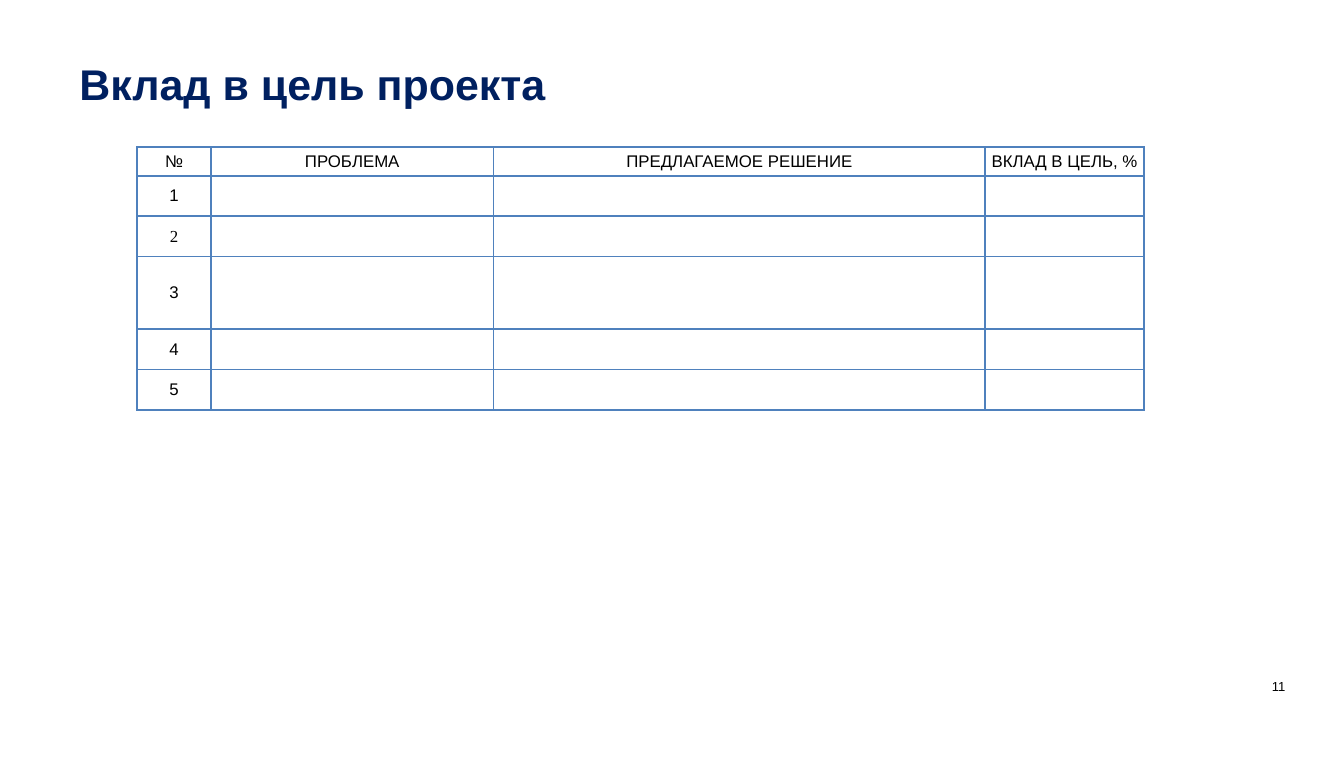
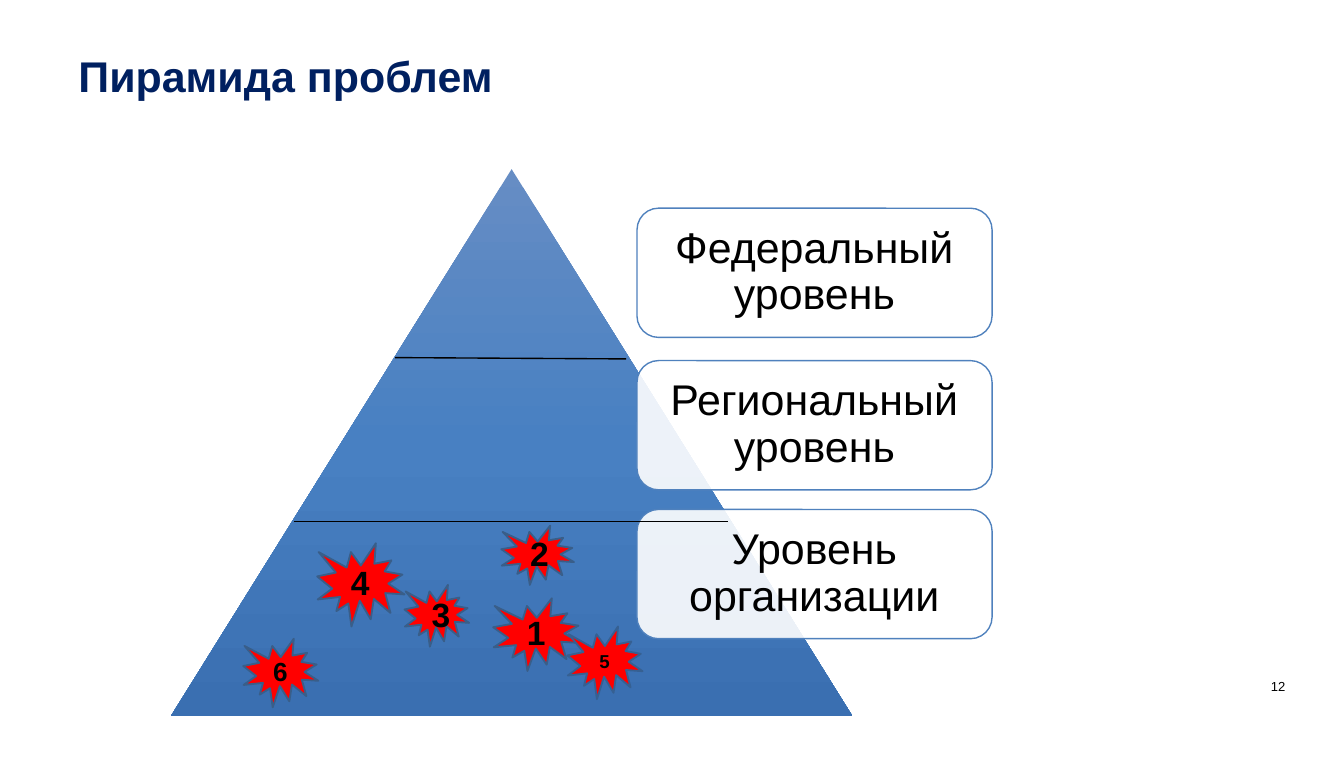
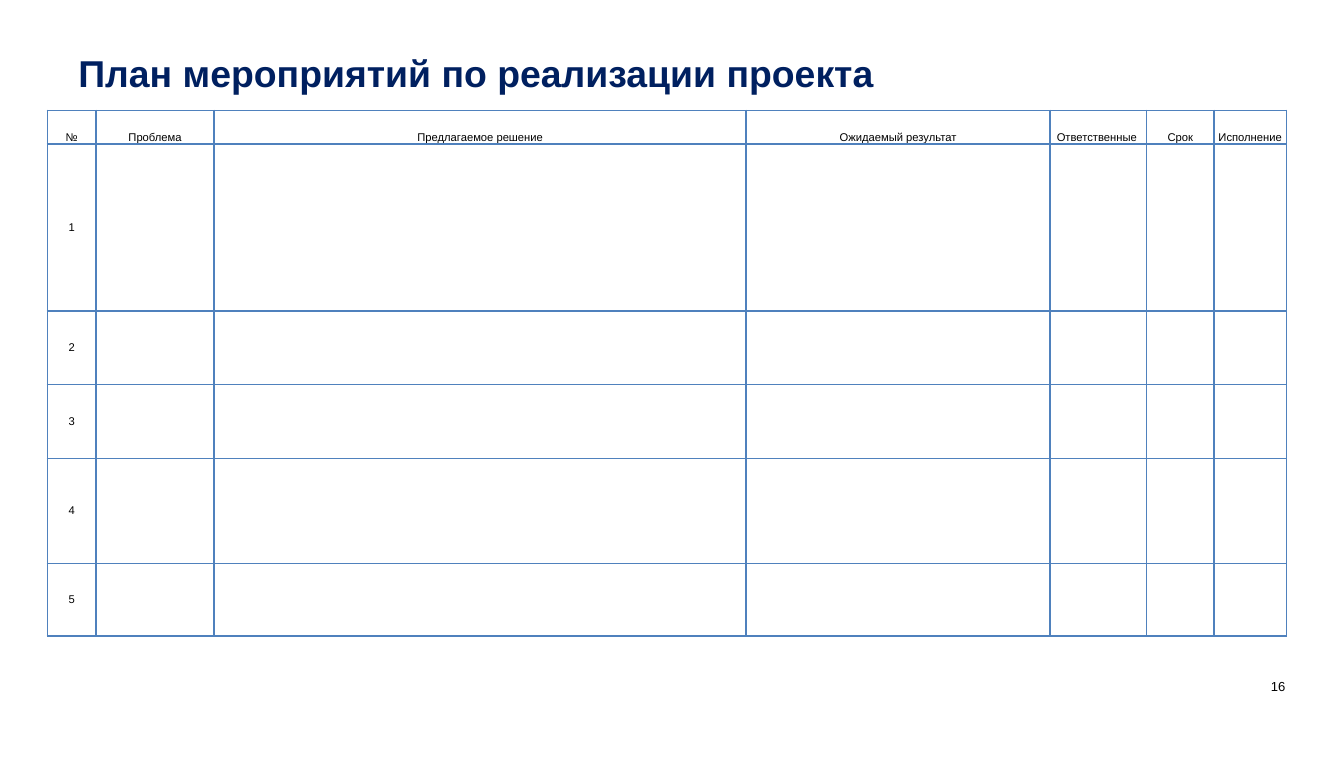
"""Build three project slides: goal table, problem pyramid and action plan."""
from copy import deepcopy

from pptx import Presentation
from pptx.dml.color import RGBColor
from pptx.enum.shapes import MSO_CONNECTOR as LINE, MSO_SHAPE as KIND
from pptx.enum.text import MSO_ANCHOR as ANC, PP_ALIGN as ALIGN
from pptx.oxml.ns import qn
from pptx.oxml.xmlchemy import OxmlElement as Node
from pptx.util import Pt

NAVY, BLUE, BLACK, WHITE, RED = "002060", "4F81BD", "000000", "FFFFFF", "FF0000"
FONT, SERIF = "Arial", "Times New Roman"
SIZE = {"slide_width": Pt(720), "slide_height": Pt(405.36)}

HEADS = [
    ("Вклад в цель проекта", 23, (42.5, 33.8, 517, 26), "11"),
    ("Пирамида проблем", 23, (42, 29.5, 517, 26), "12"),
    ("План мероприятий по реализации проекта", 20, (42, 29.5, 441.4, 26), "16"),
]
PAGE = (644.6, 360.7, 44, 10.8)

GOALS = {
    "head": ["№", "ПРОБЛЕМА", "ПРЕДЛАГАЕМОЕ РЕШЕНИЕ", "ВКЛАД В ЦЕЛЬ, %"],
    "spot": (73.5, 78.7),
    "cols": [39.6, 151.2, 263.5, 85],
    "rows": [15.5, 16.5, 16.5, 38.8, 19.5, 19.5],
    "size": 9, "side": 0.7, "top": ANC.MIDDLE, "serif": {2},
}
PLAN = {
    "head": ["№", "Проблема", "Предлагаемое решение", "Ожидаемый результат",
             "Ответственные ", "Срок", "Исполнение"],
    "spot": (25.4, 59.1),
    "cols": [26, 63.3, 285, 162.8, 51.8, 36, 38.9],
    "rows": [18, 89.3, 39.6, 39.6, 56.2, 38.9],
    "size": 6, "side": 0, "top": ANC.BOTTOM, "serif": set(),
}

PEAK = (91.5, 90.6, 365.2, 293)
SHADES = [(0, "668DC4"), (0.5, "4880C2"), (1, "3A6FB1")]
LEVELS = [("Федеральный уровень", 111.5), ("Региональный уровень", 193.1),
          ("Уровень организации", 272.8)]
CUTS = [(211.7, 191.5, 335.5, 192.2), (157.7, 279.4, 390.2, 279.4)]
SEALS = [
    ("1", 18, (264.2, 320.4, 46.8, 38.9), "395E89"),
    ("2", 18, (268.6, 281.5, 38.9, 31.7), "395E89"),
    ("3", 18, (216.7, 313.2, 34.6, 33.1), "395E89"),
    ("4", 18, (169.9, 290.9, 46.8, 44.6), "395E89"),
    ("5", 10, (304, 335.5, 40.3, 38.9), "366092"),
    ("6", 14, (130.3, 342, 40.3, 36.7), "395E89"),
]


def tint(code):
    return RGBColor.from_string(code)


def pts(nums):
    return [Pt(n) for n in nums]


def style(item, vals):
    for key, val in vals.items():
        setattr(item, key, val)


def pad(item, side, top):
    style(item, {"margin_left": Pt(side), "margin_right": Pt(side),
                 "margin_top": Pt(top), "margin_bottom": Pt(top)})


def write(frame, text, size, hue=BLACK, bold=False, face=FONT, **para):
    line = frame.paragraphs[0]
    style(line, para)
    run = line.add_run()
    run.text = text
    style(run.font, {"size": Pt(size), "name": face, "bold": bold})
    run.font.color.rgb = tint(hue)


def label(slide, box, text, size, anchor=ANC.TOP, **look):
    frame = slide.shapes.add_textbox(*pts(box)).text_frame
    style(frame, {"word_wrap": True, "vertical_anchor": anchor})
    pad(frame, 0, 0)
    write(frame, text, size, **look)


def start(deck, head):
    title, size, box, page = head
    slide = deck.slides.add_slide(deck.slide_layouts[6])
    label(slide, PAGE, page, 7, ANC.BOTTOM, alignment=ALIGN.RIGHT)
    label(slide, box, title, size, hue=NAVY, bold=True, line_spacing=0.9)
    return slide


def edge(cell):
    props = cell._tc.get_or_add_tcPr()
    for tag in ("a:lnL", "a:lnR", "a:lnT", "a:lnB"):
        line, fill, hue = Node(tag), Node("a:solidFill"), Node("a:srgbClr")
        line.set("w", str(Pt(1)))
        hue.set("val", BLUE)
        fill.append(hue)
        line.append(fill)
        props.append(line)


def blank(cell):
    mark, face = Node("a:endParaRPr"), Node("a:latin")
    mark.set("sz", "1800")
    face.set("typeface", FONT)
    mark.append(face)
    cell.text_frame.paragraphs[0]._p.append(mark)


def grid(slide, data):
    cols, rows = data["cols"], data["rows"]
    box = pts((*data["spot"], sum(cols), sum(rows)))
    table = slide.shapes.add_table(len(rows), len(cols), *box).table
    style(table, {"first_row": False, "horz_banding": False})
    for col, wide in zip(table.columns, cols):
        col.width = Pt(wide)
    for r, (row, high) in enumerate(zip(table.rows, rows)):
        row.height = Pt(high)
        texts = [str(r)] if r else data["head"]
        for c, cell in enumerate(row.cells):
            edge(cell)
            cell.fill.background()
            pad(cell, data["side"], 0)
            cell.vertical_anchor = ANC.MIDDLE if r else data["top"]
            if c < len(texts):
                face = SERIF if r in data["serif"] else FONT
                write(cell.text_frame, texts[c], data["size"], face=face,
                      alignment=ALIGN.CENTER)
            else:
                blank(cell)


def shape(slide, kind, box, fill=None, line=None, width=1):
    item = slide.shapes.add_shape(kind, *pts(box))
    item.shadow.inherit = False
    if fill:
        item.fill.solid()
        item.fill.fore_color.rgb = tint(fill)
    if line:
        item.line.color.rgb = tint(line)
        item.line.width = Pt(width)
    else:
        item.line.fill.background()
    return item


def peak(slide):
    item = shape(slide, KIND.ISOSCELES_TRIANGLE, PEAK)
    item.fill.gradient()
    item.fill.gradient_angle = 270
    stops = item._element.spPr.find(".//" + qn("a:gsLst"))
    stops.insert(1, deepcopy(stops[0]))
    for stop, (place, hue) in zip(item.fill.gradient_stops, SHADES):
        stop.position = place
        stop.color.rgb = tint(hue)


def level(slide, text, top):
    item = shape(slide, KIND.ROUNDED_RECTANGLE, (341.3, top, 190.2, 69.2), WHITE, BLUE, 0.75)
    alpha = Node("a:alpha")
    alpha.set("val", "90000")
    item._element.spPr.find(qn("a:solidFill"))[0].append(alpha)
    frame = item.text_frame
    style(frame, {"word_wrap": True, "vertical_anchor": ANC.MIDDLE})
    pad(frame, 7.2, 7.2)
    write(frame, text, 23, alignment=ALIGN.CENTER, line_spacing=0.9)


def cut(slide, ends):
    item = slide.shapes.add_connector(LINE.STRAIGHT, *pts(ends))
    item.line.color.rgb = tint(BLACK)
    item.line.width = Pt(0.75)
    item._element.spPr.append(Node("a:effectLst"))


def seal(slide, text, size, box, line):
    frame = shape(slide, KIND.EXPLOSION1, box, RED, line).text_frame
    frame.vertical_anchor = ANC.MIDDLE
    pad(frame, 7.2, 3.6)
    write(frame, text, size, bold=True, alignment=ALIGN.CENTER)


def main():
    deck = Presentation()
    style(deck, SIZE)
    goals, tower, plan = [start(deck, head) for head in HEADS]
    grid(goals, GOALS)
    peak(tower)
    for text, top in LEVELS:
        level(tower, text, top)
    for ends in CUTS:
        cut(tower, ends)
    for mark in SEALS:
        seal(tower, *mark)
    grid(plan, PLAN)
    deck.save("out.pptx")


if __name__ == "__main__":
    main()
